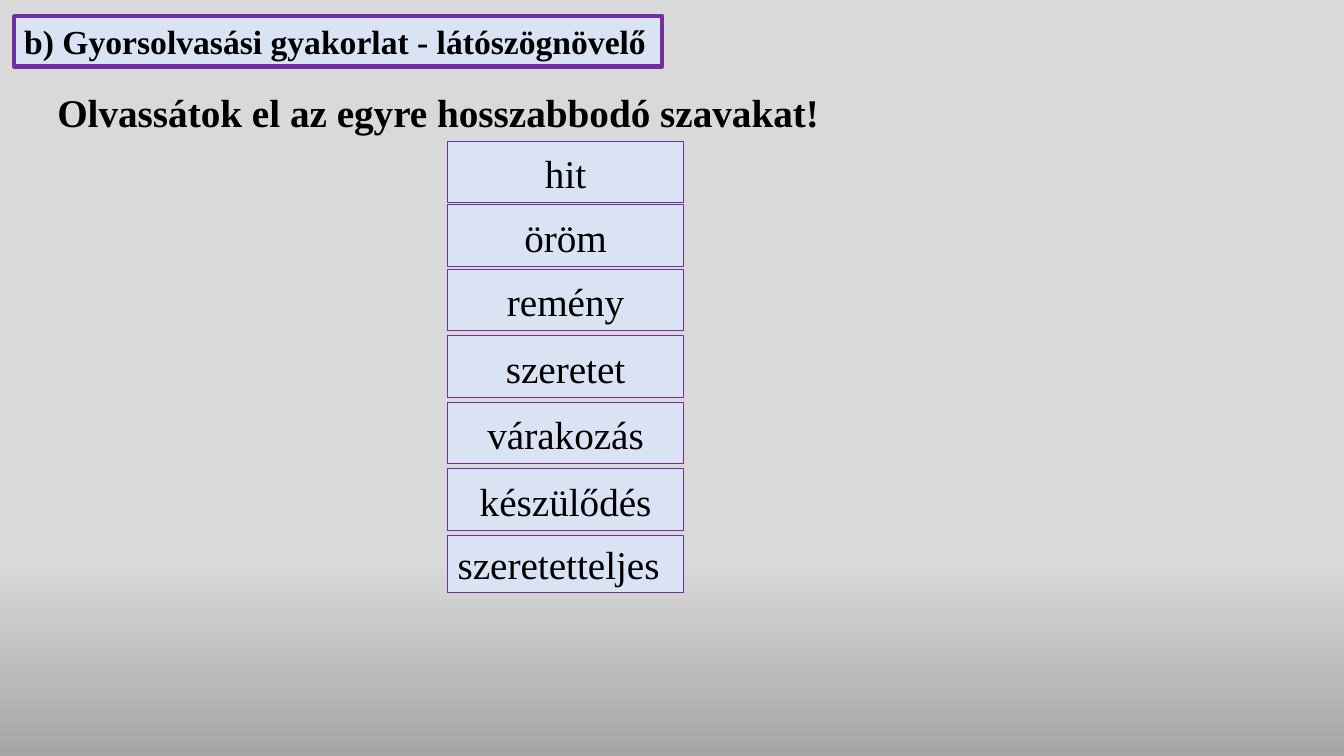
"""Build the quick-reading slide with its column of ever longer words."""
from dataclasses import dataclass
from typing import Any

from pptx import Presentation
from pptx.dml.color import RGBColor
from pptx.enum.shapes import MSO_SHAPE
from pptx.enum.text import MSO_ANCHOR, MSO_AUTO_SIZE, PP_ALIGN
from pptx.util import Pt

SCALE = 9144


@dataclass(frozen=True)
class Theme:
    font: str = "Times New Roman"
    ink: RGBColor = RGBColor(0x00, 0x00, 0x00)
    pale: RGBColor = RGBColor(0xDA, 0xE3, 0xF3)
    edge: RGBColor = RGBColor(0x70, 0x30, 0xA0)
    light: RGBColor = RGBColor(0xD9, 0xD9, 0xD9)
    dark: RGBColor = RGBColor(0xA6, 0xA6, 0xA6)
    small: int = 24
    large: int = 28
    thick: float = 3
    thin: float = 0.75


@dataclass(frozen=True)
class Word:
    text: str
    top: int
    high: int = 61
    center: bool = True


THEME = Theme()
WORDS = [
    Word("hit", 140),
    Word("öröm", 203),
    Word("remény", 267),
    Word("szeretet", 333),
    Word("várakozás", 399),
    Word("készülődés", 465),
    Word("szeretetteljes", 531, 57, False),
]
SPACED = {"alignment": PP_ALIGN.CENTER, "line_spacing": 1.07, "space_after": Pt(8)}
FLUSH = {"alignment": PP_ALIGN.LEFT}


def px(size: int) -> int:
    return size * SCALE


def apply(target: Any, values: dict[str, Any]) -> None:
    for name, value in values.items():
        setattr(target, name, value)


def place(shape: Any, left: int, top: int, wide: int, high: int) -> None:
    apply(shape, {"left": px(left), "top": px(top), "width": px(wide), "height": px(high)})


def panel(shape: Any, weight: float) -> None:
    shape.fill.solid()
    shape.fill.fore_color.rgb = THEME.pale
    shape.line.color.rgb = THEME.edge
    shape.line.width = Pt(weight)


def write(shape: Any, text: str, size: int, bold: bool, wrap: bool, layout: dict[str, Any]) -> None:
    frame = shape.text_frame
    frame.text = text
    apply(frame, {"word_wrap": wrap, "auto_size": MSO_AUTO_SIZE.NONE,
                  "vertical_anchor": MSO_ANCHOR.TOP})
    line = frame.paragraphs[0]
    apply(line, layout)
    font = line.runs[0].font
    apply(font, {"name": THEME.font, "size": Pt(size), "bold": bold})
    font.color.rgb = THEME.ink


def shade(slide: Any) -> None:
    fill = slide.background.fill
    fill.gradient()
    fill.gradient_angle = 270
    tones = [(0.74, THEME.light), (1.0, THEME.dark)]
    for stop, (point, color) in zip(fill.gradient_stops, tones):
        stop.position = point
        stop.color.rgb = color


def draw(slide: Any, word: Word) -> None:
    box = slide.shapes.add_shape(MSO_SHAPE.RECTANGLE, 0, 0, 0, 0)
    place(box, 444, word.top, 234, word.high)
    box.shadow.inherit = False
    panel(box, THEME.thin)
    write(box, word.text, THEME.large, False, True, SPACED if word.center else FLUSH)


def main() -> None:
    deck = Presentation()
    apply(deck, {"slide_width": px(1333), "slide_height": px(750)})
    slide = deck.slides.add_slide(deck.slide_layouts[5])
    shade(slide)

    title = slide.shapes.title
    place(title, 14, 16, 643, 50)
    panel(title, THEME.thick)
    write(title, "b) Gyorsolvasási gyakorlat - látószögnövelő", THEME.small, True, False, FLUSH)

    task = slide.shapes.add_textbox(0, 0, 0, 0)
    place(task, 47, 83, 784, 57)
    write(task, "Olvassátok el az egyre hosszabbodó szavakat!", THEME.large, True, False, FLUSH)

    for word in WORDS:
        draw(slide, word)
    deck.save("out.pptx")


if __name__ == "__main__":
    main()
